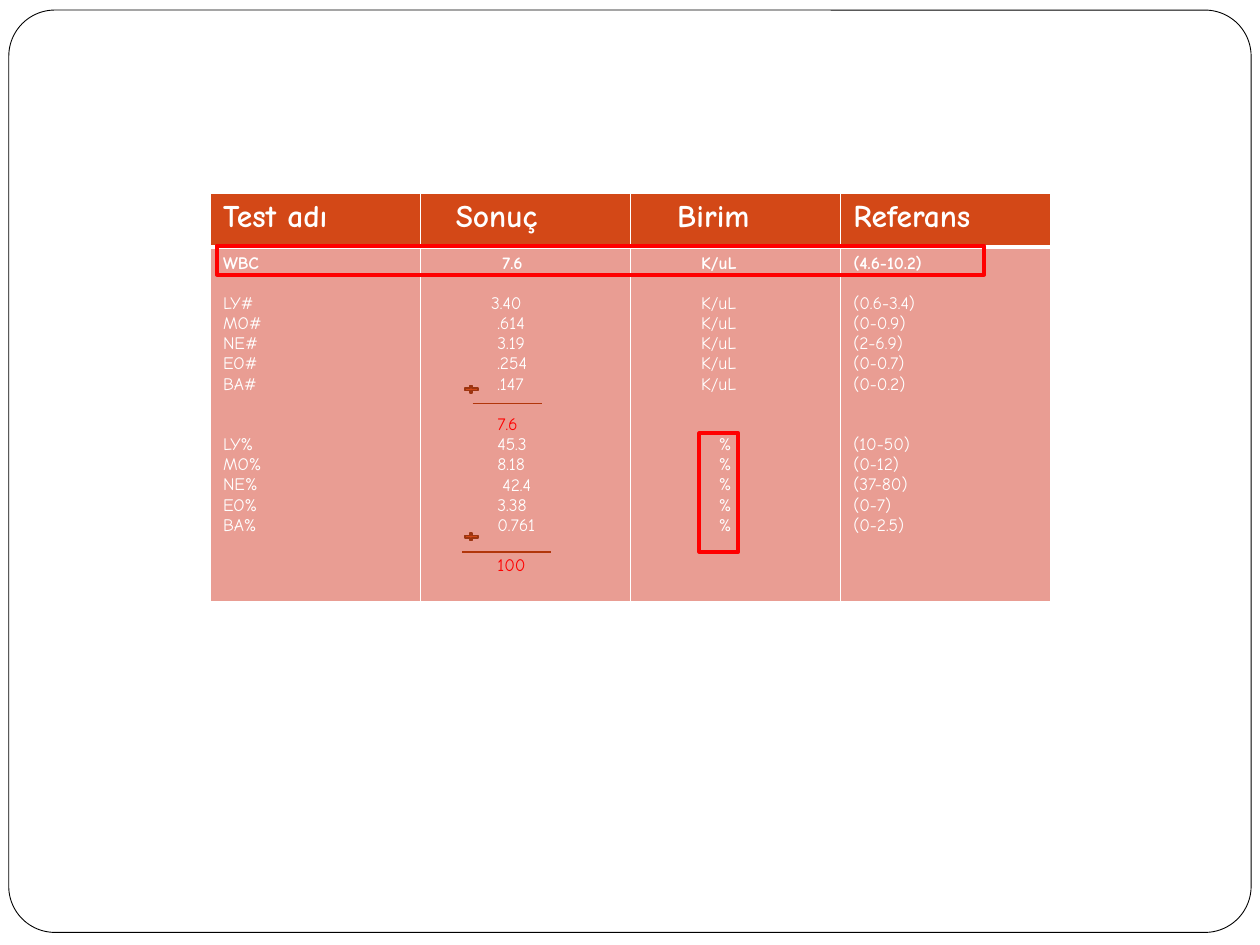
"""Build a slide with a blood count table and its highlighted totals."""
from lxml.etree import SubElement
from pptx import Presentation
from pptx.dml.color import RGBColor
from pptx.enum.shapes import MSO_CONNECTOR as Connector, MSO_SHAPE as Shape
from pptx.oxml import parse_xml
from pptx.oxml.ns import nsdecls, qn
from pptx.util import Inches, Pt

FONT = "Comic Neue"
WHITE = RGBColor(0xFF, 0xFF, 0xFF)
BLACK = RGBColor(0, 0, 0)
RED = RGBColor(0xFF, 0, 0)
ORANGE = RGBColor(0xD3, 0x48, 0x17)
PINK = RGBColor(0xE9, 0x9D, 0x93)
DARK_ORANGE = RGBColor(0x9C, 0x35, 0x11)
RULE_ORANGE = RGBColor(0xB1, 0x36, 0x0B)

LINE_PITCH = 11.5
HEADERS = [("Test adı", 0), ("Sonuç", 0.18), ("Birim", 0.27), ("Referans", 0)]
CELLS = ["LY", "MO", "NE", "EO", "BA"]
COUNTS = [("3.40", 0.46), (".614", 0.51), ("3.19", 0.51), (".254", 0.51), (".147", 0.51)]
PERCENTS = [("45.3", 0.51), ("8.18", 0.51), ("42.4", 0.55), ("3.38", 0.51), ("0.761", 0.51)]
COUNT_RANGES = ["(0.6-3.4)", "(0-0.9)", "(2-6.9)", "(0-0.7)", "(0-0.2)"]
PERCENT_RANGES = ["(10-50)", "(0-12)", "(37-80)", "(0-7)", "(0-2.5)"]


def add_box(slide, kind, box, line, width, fill=None):
    """Add an outlined preset shape, filled if a fill is given."""
    shape = slide.shapes.add_shape(kind, *map(Inches, box))
    shape.shadow.inherit = False
    if fill is None:
        shape.fill.background()
    else:
        shape.fill.solid()
        shape.fill.fore_color.rgb = fill
    shape.line.color.rgb = line
    shape.line.width = Pt(width)
    return shape


def add_sum_mark(slide, left, right, y, plus_top):
    """Add a plus sign and the rule under a column of addends."""
    add_box(slide, Shape.MATH_PLUS, (3.67, plus_top, 0.14, 0.08), DARK_ORANGE, 1, ORANGE)
    rule = slide.shapes.add_connector(
        Connector.STRAIGHT, Inches(left), Inches(y), Inches(right), Inches(y))
    rule.line.color.rgb = RULE_ORANGE
    rule.line.width = Pt(0.75)
    SubElement(rule._element.spPr, qn("a:effectLst"))


def style_cell(cell, fill, top, bottom):
    """Fill a cell and give it white borders."""
    cell.fill.solid()
    cell.fill.fore_color.rgb = fill
    properties = cell._tc.get_or_add_tcPr()
    for index, (side, width) in enumerate(zip("LRTB", (1, 1, top, bottom))):
        properties.insert(index, parse_xml(
            f'<a:ln{side} {nsdecls("a")} w="{Pt(width)}"><a:solidFill>'
            f'<a:srgbClr val="{WHITE}"/></a:solidFill></a:ln{side}>'))


def write_line(paragraph, text, indent, size, bold=False, color=WHITE, gap=0):
    """Write one indented line, with a gap counted in lines above it."""
    paragraph.text = text
    paragraph.space_before = Pt(gap * LINE_PITCH)
    paragraph._p.get_or_add_pPr().set("marL", str(Inches(indent)))
    font = paragraph.font
    font.name, font.size, font.bold = FONT, Pt(size), bold
    font.color.rgb = color


def write_column(cell, first, counts, percents, total=None):
    """Write the bold first line, the counts and the percentages of a column."""
    lines = [(*first, True, WHITE, 0)]
    lines += [(*item, False, WHITE, int(i == 0)) for i, item in enumerate(counts)]
    if total:
        lines.append((first[0], total[1], False, RED, 1))
    percent_gap = 0 if total else 2
    lines += [(*item, False, WHITE, percent_gap if i == 0 else 0)
              for i, item in enumerate(percents)]
    if total:
        lines.append((*total, False, RED, 1))
    frame = cell.text_frame
    for index, (text, indent, bold, color, gap) in enumerate(lines):
        paragraph = frame.add_paragraph() if index else frame.paragraphs[0]
        write_line(paragraph, text, indent, 10, bold, color, gap)


def add_results(slide):
    """Add the table of results."""
    table = slide.shapes.add_table(
        2, 4, Inches(1.67), Inches(1.53), Inches(6.67), Inches(3.25)).table
    table.rows[0].height, table.rows[1].height = Inches(0.43), Inches(2.82)
    for column, (text, indent) in enumerate(HEADERS):
        header = table.cell(0, column)
        style_cell(header, ORANGE, 1, 3)
        write_line(header.text_frame.paragraphs[0], text, indent, 18, True)
        style_cell(table.cell(1, column), PINK, 3, 1)

    def flush(texts):
        return [(text, 0) for text in texts]

    columns = [
        (("WBC", 0), flush(f"{name}#" for name in CELLS), flush(f"{name}%" for name in CELLS)),
        (("7.6", 0.55), COUNTS, PERCENTS, ("100", 0.51)),
        (("K/uL", 0.46), [("K/uL", 0.46)] * 5, [("%", 0.6)] * 5),
        (("(4.6-10.2)", 0), flush(COUNT_RANGES), flush(PERCENT_RANGES)),
    ]
    for column, content in enumerate(columns):
        write_column(table.cell(1, column), *content)


def main():
    """Build and save the presentation."""
    presentation = Presentation()
    presentation.slide_width, presentation.slide_height = Inches(10), Inches(7.5)
    slide = presentation.slides.add_slide(presentation.slide_layouts[6])
    frame = add_box(slide, Shape.ROUNDED_RECTANGLE, (0.07, 0.08, 9.86, 7.32), BLACK, 0.5, WHITE)
    frame.adjustments[0] = 0.05
    add_results(slide)
    for highlight in [(1.72, 1.95, 6.09, 0.23), (5.55, 3.44, 0.31, 0.94)]:
        add_box(slide, Shape.RECTANGLE, highlight, RED, 2.25)
    add_sum_mark(slide, 3.75, 4.3, 3.2, 3.05)
    add_sum_mark(slide, 3.67, 4.37, 4.38, 4.22)
    presentation.save("out.pptx")


if __name__ == "__main__":
    main()
